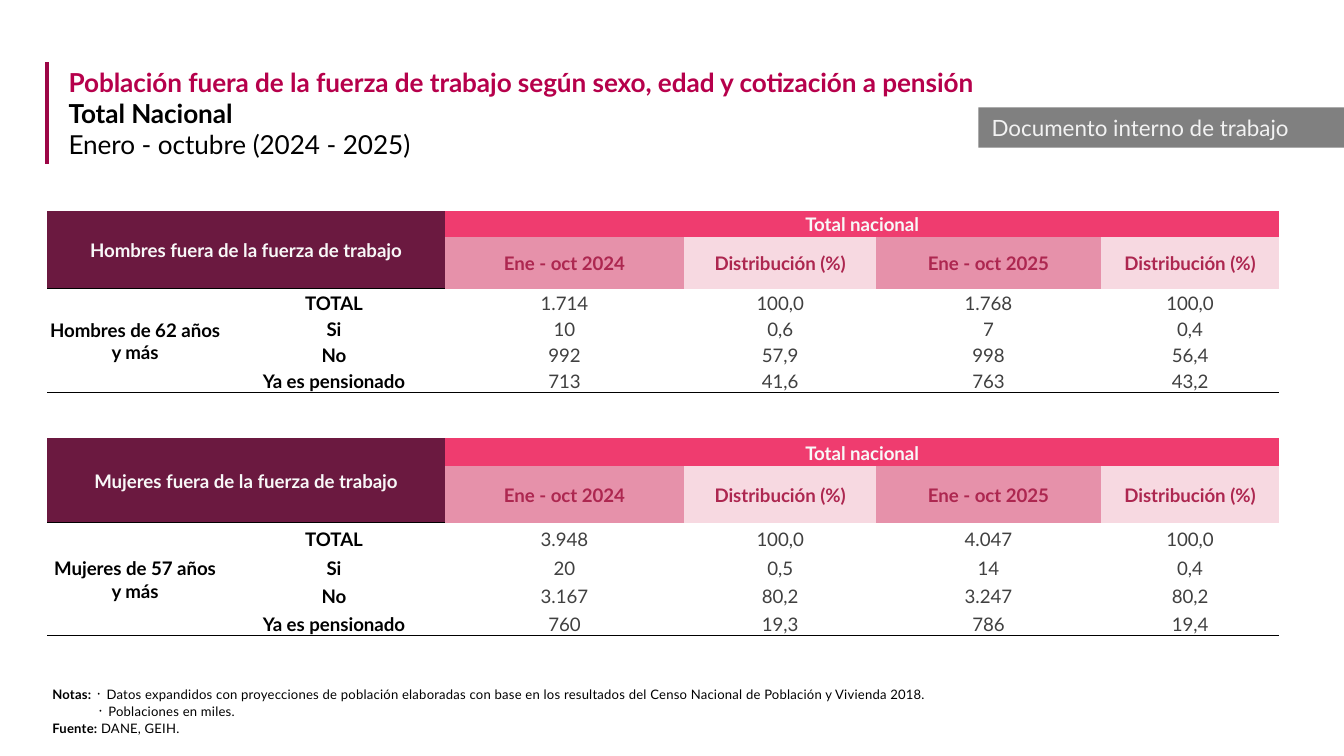
from dataclasses import dataclass

from lxml import etree
from pptx import Presentation
from pptx.dml.color import RGBColor
from pptx.enum.shapes import MSO_CONNECTOR, MSO_SHAPE
from pptx.enum.text import MSO_ANCHOR, MSO_AUTO_SIZE, PP_ALIGN
from pptx.oxml.ns import qn
from pptx.slide import Slide
from pptx.table import _Cell
from pptx.text.text import TextFrame, _Run
from pptx.util import Inches, Pt

LEFT, CENTER = PP_ALIGN.LEFT, PP_ALIGN.CENTER
TOP, MIDDLE, BOTTOM = MSO_ANCHOR.TOP, MSO_ANCHOR.MIDDLE, MSO_ANCHOR.BOTTOM
RECT, LINE = MSO_SHAPE.RECTANGLE, MSO_CONNECTOR.STRAIGHT
FIXED = MSO_AUTO_SIZE.NONE

FONT = "Lato"
PLAIN = "{2D5ABB26-0587-4C30-8999-92F81FD0307C}"
COLORS = {
    "title": "B6004B", "rule": "9C0646", "black": "000000", "white": "FFFFFF",
    "plum": "6B1940", "pink": "EF3C6F", "rose": "E691AA", "blush": "F7D9E1",
    "head": "F8F8F8", "wine": "AD2750", "value": "404040",
    "tag": "808080", "pale": "F2F2F2",
}
WIDTHS = (1.31, 1.65, 1.78, 1.43, 1.67, 1.33)
HEADS = ("Ene - oct 2024", "Distribución (%)", "Ene - oct 2025", "Distribución (%)")
LABELS = ("TOTAL", "Si", "No", "Ya es pensionado")


@dataclass
class Panel:
    top: float
    height: float
    head: str
    group: str
    rows: tuple[tuple[str, ...], ...]


PANELS = (
    Panel(1.57, 1.35, "Hombres fuera de la fuerza de trabajo", "Hombres de 62 años y más", (
        ("1.714", "100,0", "1.768", "100,0"),
        ("10", "0,6", "7", "0,4"),
        ("992", "57,9", "998", "56,4"),
        ("713", "41,6", "763", "43,2"),
    )),
    Panel(3.26, 1.47, "Mujeres fuera de la fuerza de trabajo", "Mujeres de 57 años y más", (
        ("3.948", "100,0", "4.047", "100,0"),
        ("20", "0,5", "14", "0,4"),
        ("3.167", "80,2", "3.247", "80,2"),
        ("760", "19,3", "786", "19,4"),
    )),
)


def color(name: str) -> RGBColor:
    return RGBColor.from_string(COLORS[name])


def style(run: _Run, size: float, tint: str, bold: bool = False, gap: int = 0) -> None:
    run.font.name = FONT
    run.font.size = Pt(size)
    run.font.bold = bold
    run.font.color.rgb = color(tint)
    if gap:
        run._r.get_or_add_rPr().set("spc", str(gap))


def inset(frame: TextFrame, side: float, top: float, bottom: float) -> None:
    frame.margin_left = frame.margin_right = Inches(side)
    frame.margin_top, frame.margin_bottom = Inches(top), Inches(bottom)


def edge(cell: _Cell, sides: str) -> None:
    props = cell._tc.get_or_add_tcPr()
    for i, side in enumerate("LRTB"):
        line = etree.Element(qn(f"a:ln{side}"), w=str(Pt(0.5)))
        if side in sides:
            fill = etree.SubElement(line, qn("a:solidFill"))
            etree.SubElement(fill, qn("a:srgbClr"), val=COLORS["black"])
        else:
            etree.SubElement(line, qn("a:noFill"))
        props.insert(i, line)


def put(cell: _Cell, text: str, tint: str, fill: str, bold: bool = True,
        anchor: MSO_ANCHOR = MIDDLE, sides: str = "") -> None:
    cell.margin_left = cell.margin_right = cell.margin_top = Inches(0.01)
    cell.margin_bottom = Inches(0)
    cell.vertical_anchor = anchor
    cell.fill.solid()
    cell.fill.fore_color.rgb = color(fill)
    para = cell.text_frame.paragraphs[0]
    para.text = text
    para.alignment = CENTER
    style(para.runs[0], 10, tint, bold)
    edge(cell, sides)


def draw_panel(slide: Slide, panel: Panel) -> None:
    frame = slide.shapes.add_table(
        6, 6, Inches(0.35), Inches(panel.top), Inches(sum(WIDTHS)), Inches(panel.height))
    grid = frame.table
    grid.first_row = grid.horz_banding = False
    grid._tbl.tblPr.find(qn("a:tableStyleId")).text = PLAIN
    for col, width in zip(grid.columns, WIDTHS):
        col.width = Inches(width)
    for i, row in enumerate(grid.rows):
        row.height = Inches(panel.height / 7 * (2 if i == 1 else 1))

    grid.cell(0, 0).merge(grid.cell(1, 1))
    grid.cell(0, 2).merge(grid.cell(0, 5))
    grid.cell(2, 0).merge(grid.cell(5, 0))
    put(grid.cell(0, 0), panel.head, "head", "plum", sides="B")
    put(grid.cell(0, 2), "Total nacional", "head", "pink")
    put(grid.cell(2, 0), panel.group, "black", "white", sides="TB")
    edge(grid.cell(5, 0), "B")
    for c, head in enumerate(HEADS, 2):
        put(grid.cell(1, c), head, "wine", "blush" if c % 2 else "rose")
    for r, (label, values) in enumerate(zip(LABELS, panel.rows), 2):
        base = "B" if r == 5 else ""
        put(grid.cell(r, 1), label, "black", "white", True, BOTTOM, "T" if r == 2 else base)
        for c, value in enumerate(values, 2):
            put(grid.cell(r, c), value, "value", "white", False, BOTTOM, base)


def draw_title(slide: Slide) -> None:
    title = slide.shapes.title
    title.left, title.top = Inches(0.44), Inches(0.45)
    title.width, title.height = Inches(9.56), Inches(0.78)
    frame = title.text_frame
    frame.text = ("Población fuera de la fuerza de trabajo según sexo, edad y cotización a pensión\n"
                  "Total Nacional\nEnero - octubre (2024 - 2025)")
    frame.auto_size = FIXED
    frame.vertical_anchor = TOP
    inset(frame, 0.07, 0.04, 0.04)
    looks = (("title", True), ("black", True), ("black", False))
    for para, (tint, bold) in zip(frame.paragraphs, looks):
        para.alignment = LEFT
        style(para.runs[0], 14, tint, bold, -5)


def draw_notes(slide: Slide) -> None:
    box = slide.shapes.add_textbox(Inches(0.38), Inches(5.09), Inches(9.24), Inches(0.39))
    frame = box.text_frame
    frame.word_wrap = True
    frame.vertical_anchor = BOTTOM
    inset(frame, 0, 0.01, 0)
    notes = (
        ("Notas: ", "᛫ Datos expandidos con proyecciones de población elaboradas con base en "
                    "los resultados del Censo Nacional de Población y Vivienda 2018.", 0.01),
        ("", "᛫ Poblaciones en miles.", 0.34),
        ("Fuente: ", "DANE, GEIH.", 0.01),
    )
    for i, (lead, text, indent) in enumerate(notes):
        para = frame.add_paragraph() if i else frame.paragraphs[0]
        para._p.get_or_add_pPr().set("marL", str(Inches(indent)))
        para.line_spacing = 1.04
        para.space_before = Pt(0.6 if i else 0)
        for part, bold in ((lead, True), (text, False)):
            if part:
                run = para.add_run()
                run.text = part
                style(run, 7, "black", bold, 13)


def draw_tag(slide: Slide) -> None:
    tag = slide.shapes.add_shape(RECT, Inches(7.28), Inches(0.8), Inches(2.72), Inches(0.3))
    tag.shadow.inherit = False
    tag.fill.solid()
    tag.fill.fore_color.rgb = color("tag")
    tag.line.fill.background()
    frame = tag.text_frame
    frame.text = "Documento interno de trabajo"
    frame.vertical_anchor = TOP
    frame.paragraphs[0].alignment = LEFT
    style(frame.paragraphs[0].runs[0], 12, "pale")


def draw_rule(slide: Slide) -> None:
    rule = slide.shapes.add_connector(
        LINE, Inches(0.35), Inches(1.22), Inches(0.35), Inches(0.46))
    rule.line.color.rgb = color("rule")
    rule.line.width = Pt(2)
    etree.SubElement(rule._element.spPr, qn("a:effectLst"))


def main() -> None:
    deck = Presentation()
    deck.slide_width, deck.slide_height = Inches(10), Inches(10 * 9 / 16)
    slide = deck.slides.add_slide(deck.slide_layouts[5])
    draw_title(slide)
    draw_notes(slide)
    draw_tag(slide)
    for panel in PANELS:
        draw_panel(slide, panel)
    draw_rule(slide)
    deck.save("out.pptx")


if __name__ == "__main__":
    main()
